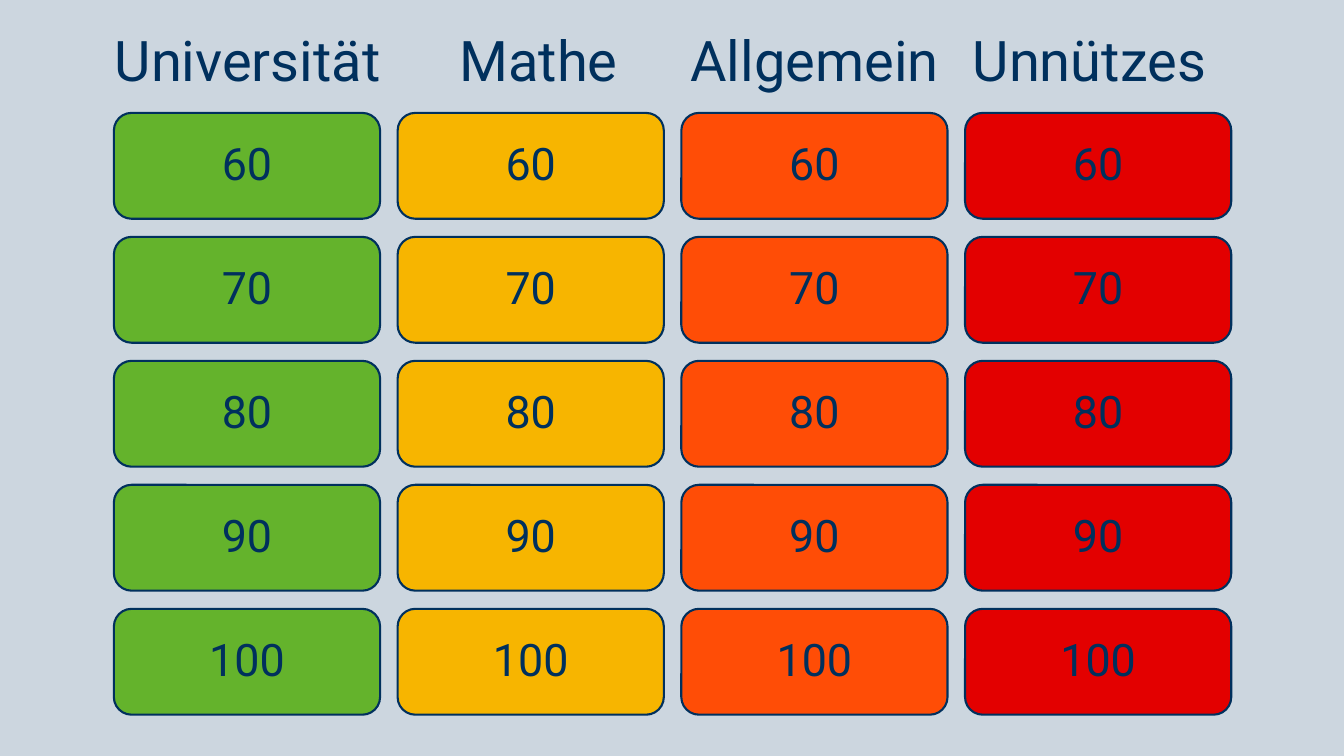
import pptx
import pptx.util
import pptx.dml.color
import pptx.enum.shapes
import pptx.enum.text

Inches = pptx.util.Inches
Pt = pptx.util.Pt
RGB = pptx.dml.color.RGBColor.from_string

COLORS = {
    "background": "CCD6DF",
    "navy": "00305D",
    "green": "64B32C",
    "yellow": "F7B500",
    "orange": "FF4D06",
    "red": "E30000",
}

# Category, card colour, heading left, heading width
CATEGORIES = [
    ("Universität", "green", 1.04, 3.1),
    ("Mathe", "yellow", 4.46, 2.39),
    ("Allgemein", "orange", 6.75, 2.85),
    ("Unnützes", "red", 9.55, 2.74),
]
POINTS = [60, 70, 80, 90, 100]

# Card grid
LEFT, TOP = 1.13, 1.12
CARD_W, CARD_H = 2.64, 1.05
COL_STEP, ROW_STEP = 2.814, 1.23


def set_text(tf, text, size):
    tf.word_wrap = True
    p = tf.paragraphs[0]
    p.text = text
    p.font.name = "Roboto"
    p.font.size = Pt(size)
    p.font.color.rgb = RGB(COLORS["navy"])
    return p


prs = pptx.Presentation()
prs.slide_width = Inches(13.33)
prs.slide_height = Inches(7.5)
s = prs.slides.add_slide(prs.slide_layouts[6])
s.background.fill.solid()
s.background.fill.fore_color.rgb = RGB(COLORS["background"])

# Point cards
for row, points in enumerate(POINTS):
    for col, (name, color, x, w) in enumerate(CATEGORIES):
        sp = s.shapes.add_shape(
            pptx.enum.shapes.MSO_SHAPE.ROUNDED_RECTANGLE,
            Inches(LEFT + col * COL_STEP), Inches(TOP + row * ROW_STEP),
            Inches(CARD_W), Inches(CARD_H))
        sp.shadow.inherit = False
        sp.fill.solid()
        sp.fill.fore_color.rgb = RGB(COLORS[color])
        sp.line.color.rgb = RGB(COLORS["navy"])
        sp.line.width = Pt(1.5)
        tf = sp.text_frame
        tf.vertical_anchor = pptx.enum.text.MSO_ANCHOR.MIDDLE
        p = set_text(tf, str(points), 32)
        p.alignment = pptx.enum.text.PP_ALIGN.CENTER
        p.line_spacing = 0.9

# Category headings
for name, color, x, w in CATEGORIES:
    tb = s.shapes.add_textbox(Inches(x), Inches(0.2), Inches(w), Inches(0.77))
    set_text(tb.text_frame, name, 40)

prs.save("out.pptx")
